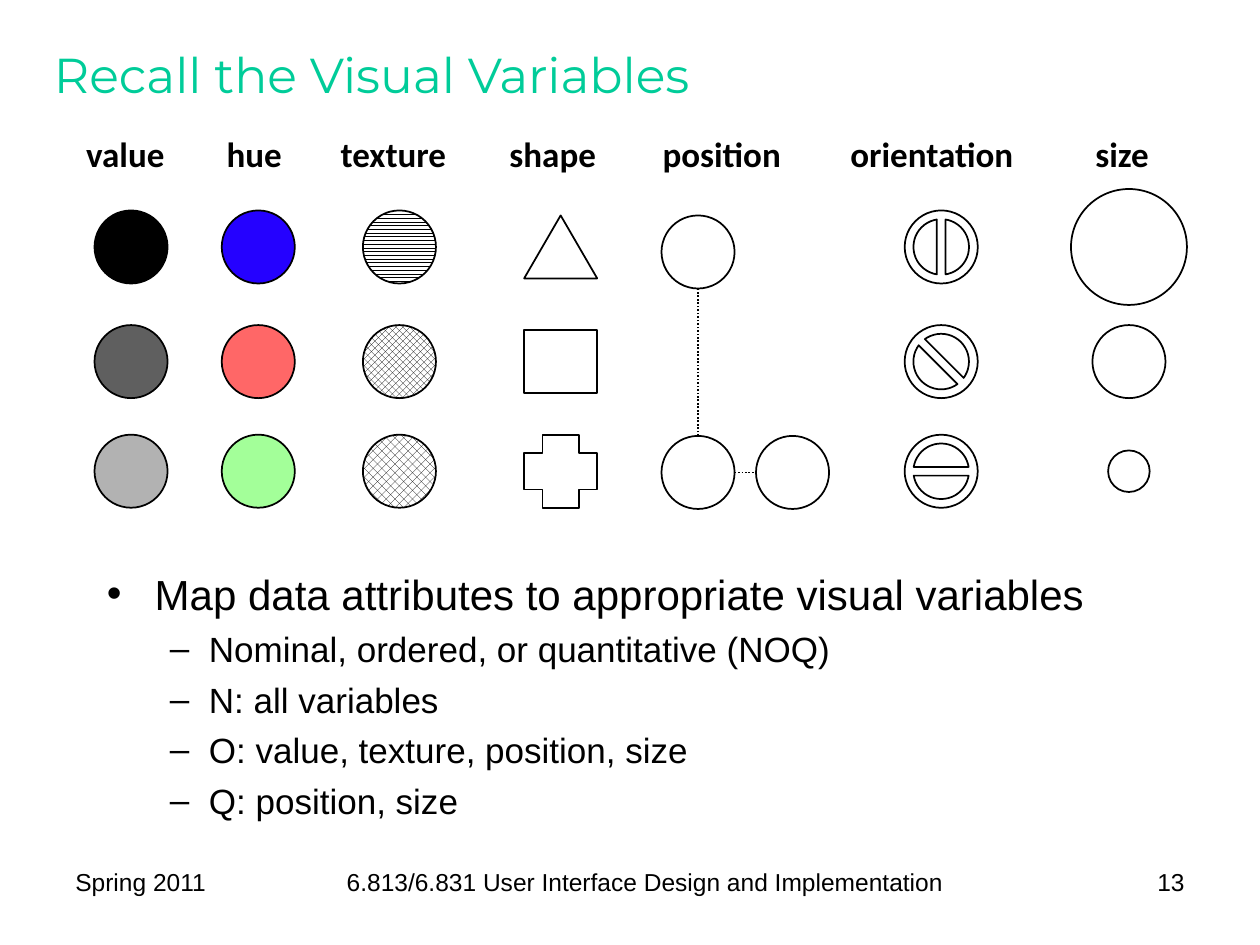
from dataclasses import dataclass
from typing import Optional

from lxml import etree
from pptx import Presentation
from pptx.dml.color import RGBColor
from pptx.enum.dml import MSO_LINE, MSO_PATTERN
from pptx.enum.shapes import MSO_CONNECTOR, MSO_SHAPE
from pptx.enum.text import MSO_ANCHOR, PP_ALIGN
from pptx.oxml.ns import qn
from pptx.util import Inches, Pt

BLACK = RGBColor(0, 0, 0)
WHITE = RGBColor(0xFF, 0xFF, 0xFF)
GREEN = RGBColor(0, 0xCC, 0x99)
VALUES = (BLACK, RGBColor(0x5F, 0x5F, 0x5F), RGBColor(0xB2, 0xB2, 0xB2))
HUES = (RGBColor(0x25, 0x01, 0xFF), RGBColor(0xFF, 0x67, 0x67), RGBColor(0xA3, 0xFF, 0x99))
TEXTURES = (MSO_PATTERN.ZIG_ZAG, MSO_PATTERN.LARGE_CHECKER_BOARD, MSO_PATTERN.PERCENT_50)
CIRCLE, NO_SYMBOL = MSO_SHAPE.OVAL, MSO_SHAPE.NO_SYMBOL
TRIANGLE, SQUARE, CROSS = MSO_SHAPE.ISOSCELES_TRIANGLE, MSO_SHAPE.RECTANGLE, MSO_SHAPE.CROSS
LEFT, CENTER, RIGHT = PP_ALIGN.LEFT, PP_ALIGN.CENTER, PP_ALIGN.RIGHT

MARK = 0.58
ROWS = (1.96, 2.87, 3.74)  # centre of each row of marks


@dataclass
class Mark:
    """One mark, placed by its centre."""
    x: float
    y: float
    width: float = MARK
    height: float = MARK
    kind: MSO_SHAPE = CIRCLE
    fill: RGBColor = WHITE
    pattern: Optional[MSO_PATTERN] = None
    rotation: float = 0
    adjustment: Optional[float] = None


@dataclass
class Heading:
    text: str
    x: float
    width: float


@dataclass
class Bullet:
    text: str
    symbol: str
    size: float
    indent: float
    hanging: float
    space_before: float


@dataclass
class Footer:
    text: str
    left: float
    width: float
    align: PP_ALIGN


HEADINGS = (
    Heading("value", 1.04, 0.91),
    Heading("hue", 2.05, 0.7),
    Heading("texture", 3.17, 1.13),
    Heading("shape", 4.45, 1.01),
    Heading("position", 5.8, 1.28),
    Heading("orientation", 7.47, 1.64),
    Heading("size", 8.96, 0.73),
)
VALUE_X, HUE_X, TEXTURE_X, SHAPE_X, _, ORIENTATION_X, SIZE_X = (h.x for h in HEADINGS)
POSITION_X, POSITION_RIGHT_X = 5.54, 6.29
POSITION_TOP_Y, POSITION_Y = 2.0, 3.75

MARKS = (
    [Mark(VALUE_X, y, fill=color) for y, color in zip(ROWS, VALUES)]
    + [Mark(HUE_X, y, fill=color) for y, color in zip(ROWS, HUES)]
    + [Mark(TEXTURE_X, y, pattern=pattern) for y, pattern in zip(ROWS, TEXTURES)]
    + [Mark(SHAPE_X, y, height=height, kind=kind) for y, height, kind in
       zip(ROWS, (0.5, 0.5, MARK), (TRIANGLE, SQUARE, CROSS))]
    + [Mark(POSITION_X, POSITION_TOP_Y), Mark(POSITION_X, POSITION_Y),
       Mark(POSITION_RIGHT_X, POSITION_Y)]
    + [Mark(ORIENTATION_X, y, kind=NO_SYMBOL, rotation=angle, adjustment=0.12)
       for y, angle in zip(ROWS, (45, 0, 315))]
    + [Mark(SIZE_X, y, width=size, height=size) for y, size in zip(ROWS, (0.92, MARK, 0.33))]
)

SUBPOINTS = (
    "Nominal, ordered, or quantitative (NOQ)",
    "N: all variables",
    "O: value, texture, position, size",
    "Q: position, size",
)
BULLETS = [Bullet("Map data attributes to appropriate visual variables", "•", 24, 0.38, 0.38, 0)]
BULLETS += [Bullet(text, "–", 20, 0.81, 0.31, 5) for text in SUBPOINTS]

FOOTERS = (
    Footer("Spring 2011", 0.5, 1.5, LEFT),
    Footer("6.813/6.831 User Interface Design and Implementation", 2.08, 6.08, CENTER),
    Footer("13", 8.25, 1.25, RIGHT),
)


def style(paragraph, font: str, size: float, color: RGBColor = BLACK, bold: bool = False) -> None:
    for run in paragraph.runs:
        run.font.name = font
        run.font.size = Pt(size)
        run.font.color.rgb = color
        run.font.bold = bold


def add_text(slide, text: str, left: float, top: float, width: float, height: float,
             font: str, size: float, color: RGBColor = BLACK, bold: bool = False,
             align: PP_ALIGN = LEFT, wrap: bool = True):
    frame = slide.shapes.add_textbox(
        Inches(left), Inches(top), Inches(width), Inches(height)).text_frame
    frame.word_wrap = wrap
    frame.text = text
    frame.paragraphs[0].alignment = align
    style(frame.paragraphs[0], font, size, color, bold)
    return frame


def add_mark(slide, mark: Mark) -> None:
    shape = slide.shapes.add_shape(
        mark.kind, Inches(mark.x - mark.width / 2), Inches(mark.y - mark.height / 2),
        Inches(mark.width), Inches(mark.height))
    shape.shadow.inherit = False
    shape.rotation = mark.rotation
    if mark.adjustment is not None:
        shape.adjustments[0] = mark.adjustment
    if mark.pattern is None:
        shape.fill.solid()
        shape.fill.fore_color.rgb = mark.fill
    else:
        shape.fill.patterned()
        shape.fill.pattern = mark.pattern
        shape.fill.fore_color.rgb = BLACK
        shape.fill.back_color.rgb = WHITE
    shape.line.color.rgb = BLACK
    shape.line.width = Pt(1)


def add_dotted_line(slide, x1: float, y1: float, x2: float, y2: float) -> None:
    line = slide.shapes.add_connector(
        MSO_CONNECTOR.STRAIGHT, Inches(x1), Inches(y1), Inches(x2), Inches(y2))
    line.line.color.rgb = BLACK
    line.line.width = Pt(1)
    line.line.dash_style = MSO_LINE.ROUND_DOT
    etree.SubElement(line._element.spPr, qn("a:effectLst"))


def add_bullets(slide, bullets: list[Bullet]) -> None:
    frame = slide.shapes.add_textbox(
        Inches(0.75), Inches(4.46), Inches(8.5), Inches(2.21)).text_frame
    frame.word_wrap = True
    for number, bullet in enumerate(bullets):
        paragraph = frame.add_paragraph() if number else frame.paragraphs[0]
        paragraph.text = bullet.text
        paragraph.level = 1 if number else 0
        paragraph.space_before = Pt(bullet.space_before)
        style(paragraph, "Arial", bullet.size)
        properties = paragraph._p.get_or_add_pPr()
        properties.set("marL", str(Inches(bullet.indent)))
        properties.set("indent", str(-Inches(bullet.hanging)))
        etree.SubElement(properties, qn("a:buFont"), typeface="Arial")
        etree.SubElement(properties, qn("a:buChar"), char=bullet.symbol)


def main() -> None:
    presentation = Presentation()
    presentation.slide_width, presentation.slide_height = Inches(10), Inches(7.5)
    slide = presentation.slides.add_slide(presentation.slide_layouts[6])

    # Title and column headings
    title = add_text(slide, "Recall the Visual Variables", 0.33, 0.17, 9.25, 0.83,
                     "Montserrat", 28, GREEN)
    title.vertical_anchor = MSO_ANCHOR.MIDDLE
    for heading in HEADINGS:
        add_text(slide, heading.text, heading.x - heading.width / 2, 1, heading.width, 0.43,
                 "Calibri", 20, bold=True, wrap=False)

    # Grid of marks, with the position offsets dotted beneath
    radius = MARK / 2
    add_dotted_line(slide, POSITION_X, POSITION_Y - radius, POSITION_X, POSITION_TOP_Y + radius)
    add_dotted_line(slide, POSITION_X + radius, POSITION_Y, POSITION_RIGHT_X - radius, POSITION_Y)
    for mark in MARKS:
        add_mark(slide, mark)

    # Bullets and footer
    add_bullets(slide, BULLETS)
    for footer in FOOTERS:
        add_text(slide, footer.text, footer.left, 6.83, footer.width, 0.52,
                 "Arial", 14, align=footer.align)

    presentation.save("out.pptx")


if __name__ == "__main__":
    main()
